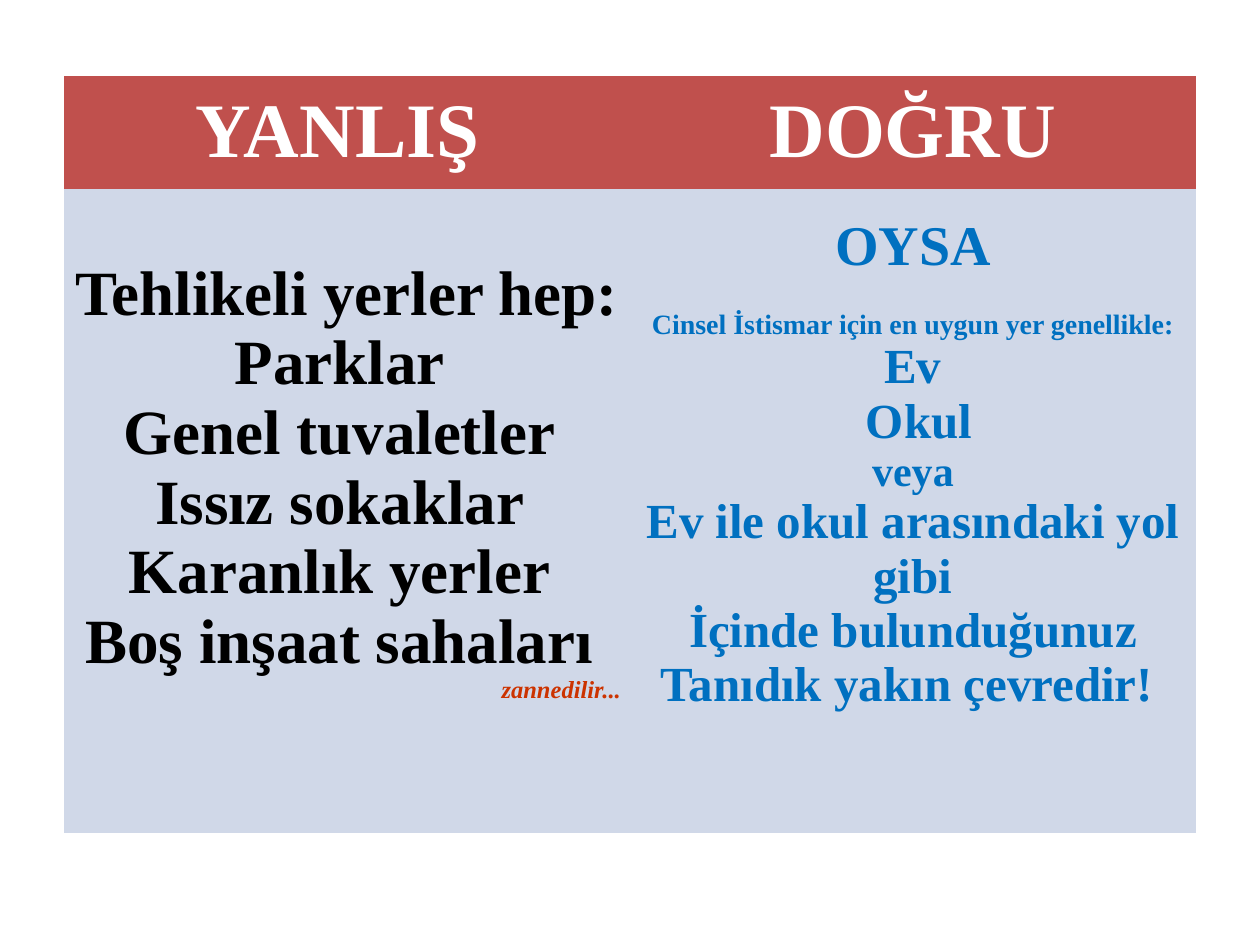
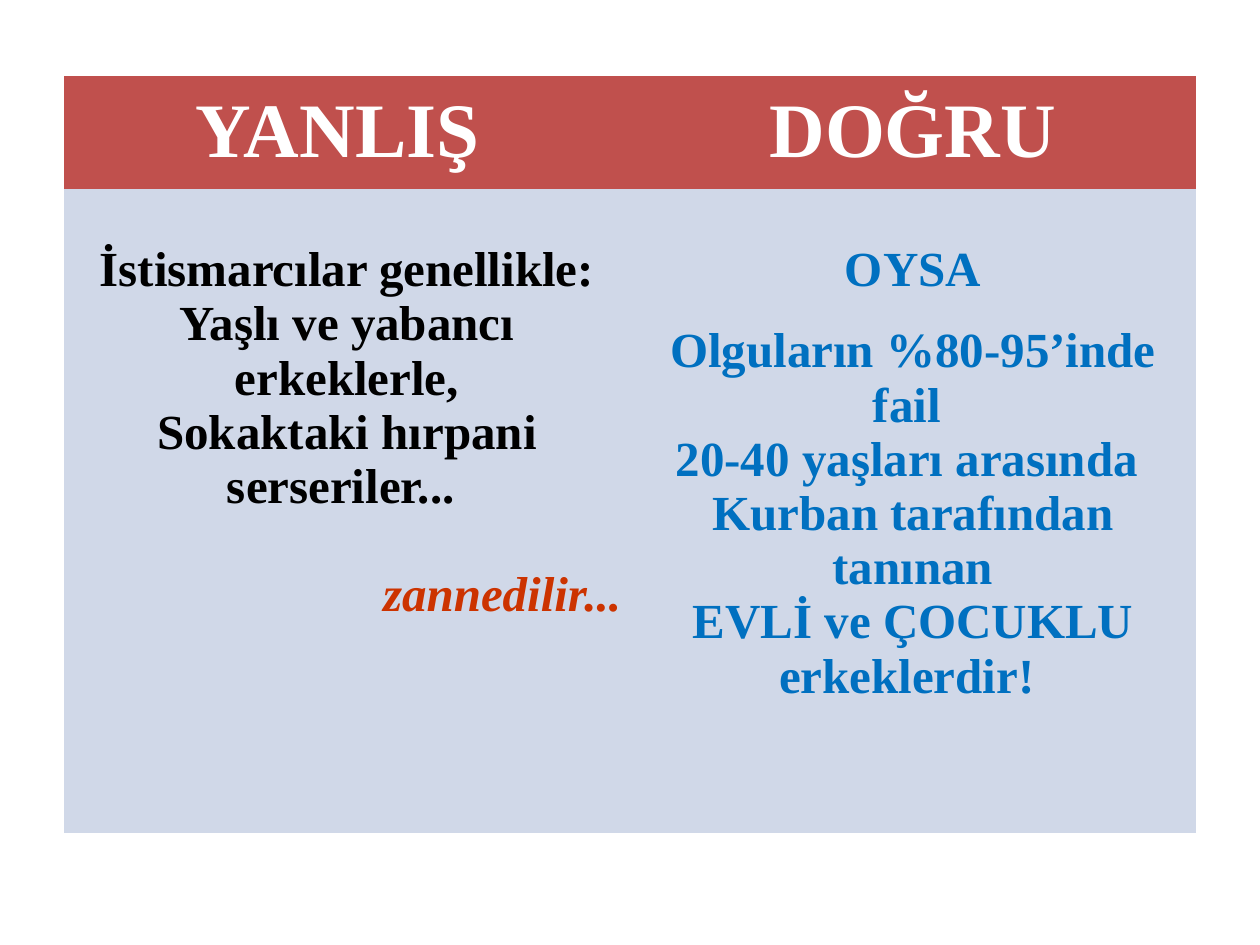
from pptx import Presentation
from pptx import util as u
from pptx.dml.color import RGBColor
from pptx.enum import text

EMU_PER_PX = 914400 / 126
FONT = "Times New Roman"
NO_STYLE = "{2D5ABB26-0587-4C30-8999-92F81FD0307C}"
COLORS = {
    "header": "C0504D",
    "body": "D0D8E8",
    "heading": "FFFFFF",
    "myth": "000000",
    "fact": "0070C0",
    "aside": "CC3300",
}
HEADINGS = ["YANLIŞ ", "DOĞRU"]
COLUMN_WIDTH = 566
ROW_HEIGHTS = [113, 644]
SIDE_MARGIN = 9
ASIDE = "zannedilir..."

# Each body cell: top margin in px, then lines of (text, size in pt, role, gap before in px)
SLIDES = [
    [
        (70, [
            ("Tehlikeli yerler hep:", 36, "myth", 0),
            ("Parklar ", 36, "myth", 0),
            ("Genel tuvaletler ", 36, "myth", 0),
            ("Issız sokaklar ", 36, "myth", 0),
            ("Karanlık yerler ", 36, "myth", 0),
            ("Boş inşaat sahaları ", 36, "myth", 0),
            (ASIDE, 14, "aside", 0),
        ]),
        (27, [
            ("OYSA", 32, "fact", 0),
            ("Cinsel İstismar için en uygun yer genellikle:", 16, "fact", 31),
            ("Ev", 28, "fact", 0),
            (" Okul", 28, "fact", 0),
            ("veya", 24, "fact", 0),
            ("Ev ile okul arasındaki yol gibi", 28, "fact", 0),
            ("İçinde bulunduğunuz", 28, "fact", 0),
            ("Tanıdık yakın çevredir! ", 28, "fact", 0),
        ]),
    ],
    [
        (54, [
            ("İstismarcılar genellikle:", 28, "myth", 0),
            ("Yaşlı ve yabancı erkeklerle,", 28, "myth", 0),
            ("Sokaktaki hırpani serseriler... ", 28, "myth", 0),
            (ASIDE, 28, "aside", 54),
        ]),
        (54, [
            ("OYSA", 28, "fact", 0),
            ("Olguların %80-95’inde fail ", 28, "fact", 27),
            ("20-40 yaşları arasında ", 28, "fact", 0),
            ("Kurban tarafından tanınan", 28, "fact", 0),
            ("EVLİ ve ÇOCUKLU erkeklerdir! ", 28, "fact", 0),
        ]),
    ],
]


def px(length):
    return u.Emu(round(length * EMU_PER_PX))


def fill_cell(cell, fill, top_margin, lines, line_spacing=1.0):
    """Paint a cell and write its lines, one paragraph each."""
    cell.fill.solid()
    cell.fill.fore_color.rgb = RGBColor.from_string(COLORS[fill])
    cell.margin_left = cell.margin_right = px(SIDE_MARGIN)
    cell.margin_top, cell.margin_bottom = px(top_margin), 0
    frame = cell.text_frame
    frame.text = "\n".join(line[0] for line in lines)
    for para, (_, size, role, gap) in zip(frame.paragraphs, lines):
        aside = role == "aside"
        para.alignment = text.PP_ALIGN.RIGHT if aside else text.PP_ALIGN.CENTER
        para.line_spacing = line_spacing
        para.space_before = px(gap)
        font = para.runs[0].font
        font.name, font.size = FONT, u.Pt(size)
        font.bold, font.italic = True, aside
        font.color.rgb = RGBColor.from_string(COLORS[role])


deck = Presentation()
deck.slide_width, deck.slide_height = px(1260), px(945)

for body_cells in SLIDES:
    page = deck.slides.add_slide(deck.slide_layouts[6])
    frame = page.shapes.add_table(
        2, 2, px(64), px(76), px(2 * COLUMN_WIDTH), px(sum(ROW_HEIGHTS)))
    table = frame.table
    table.first_row = table.horz_banding = False
    table._tbl.xpath("./a:tblPr/a:tableStyleId")[0].text = NO_STYLE
    for row, height in zip(table.rows, ROW_HEIGHTS):
        row.height = px(height)
    for index, (heading, (top_margin, lines)) in enumerate(zip(HEADINGS, body_cells)):
        table.columns[index].width = px(COLUMN_WIDTH)
        fill_cell(table.cell(0, index), "header", 0, [(heading, 44, "heading", 0)], 1.15)
        fill_cell(table.cell(1, index), "body", top_margin, lines)

deck.save("out.pptx")
